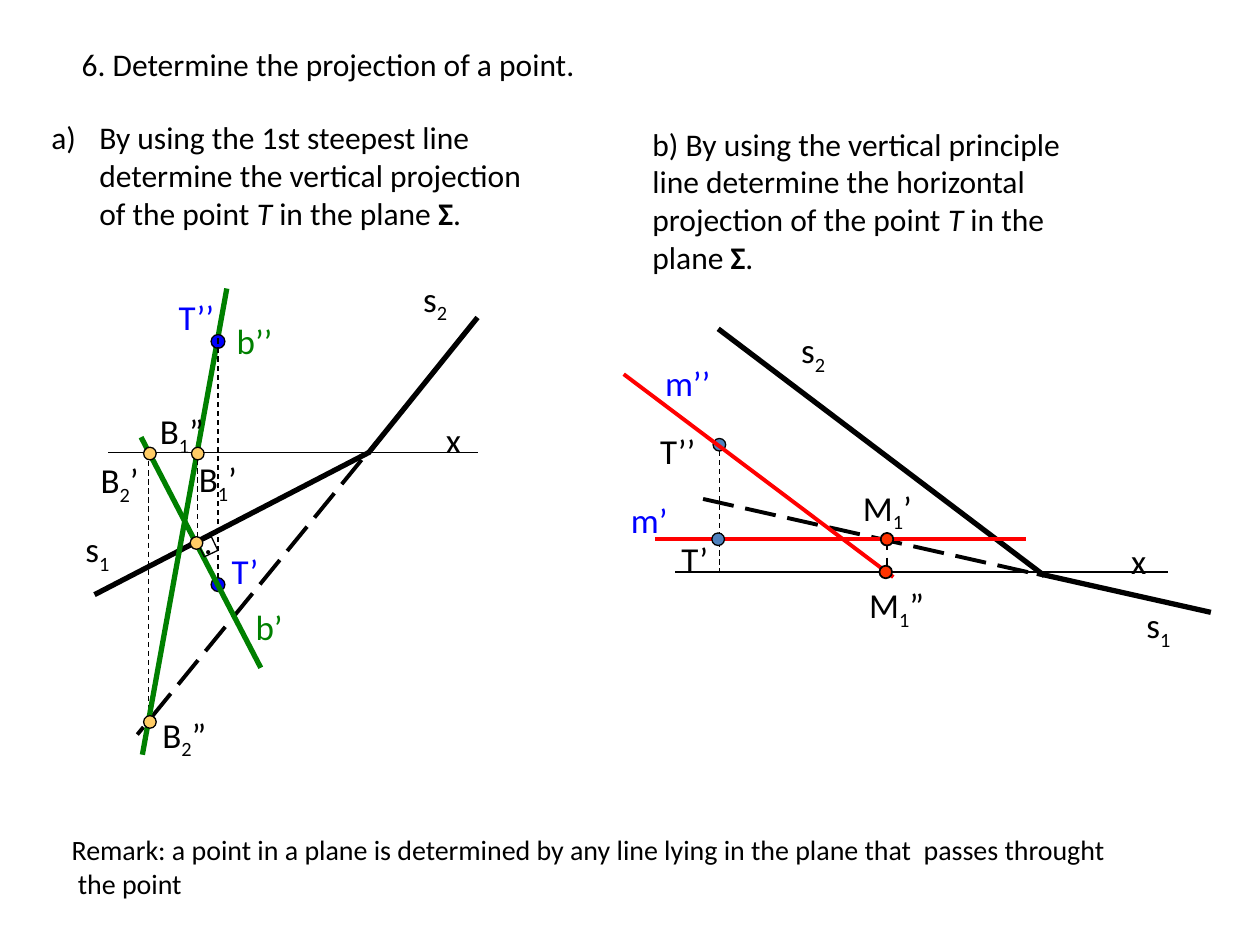
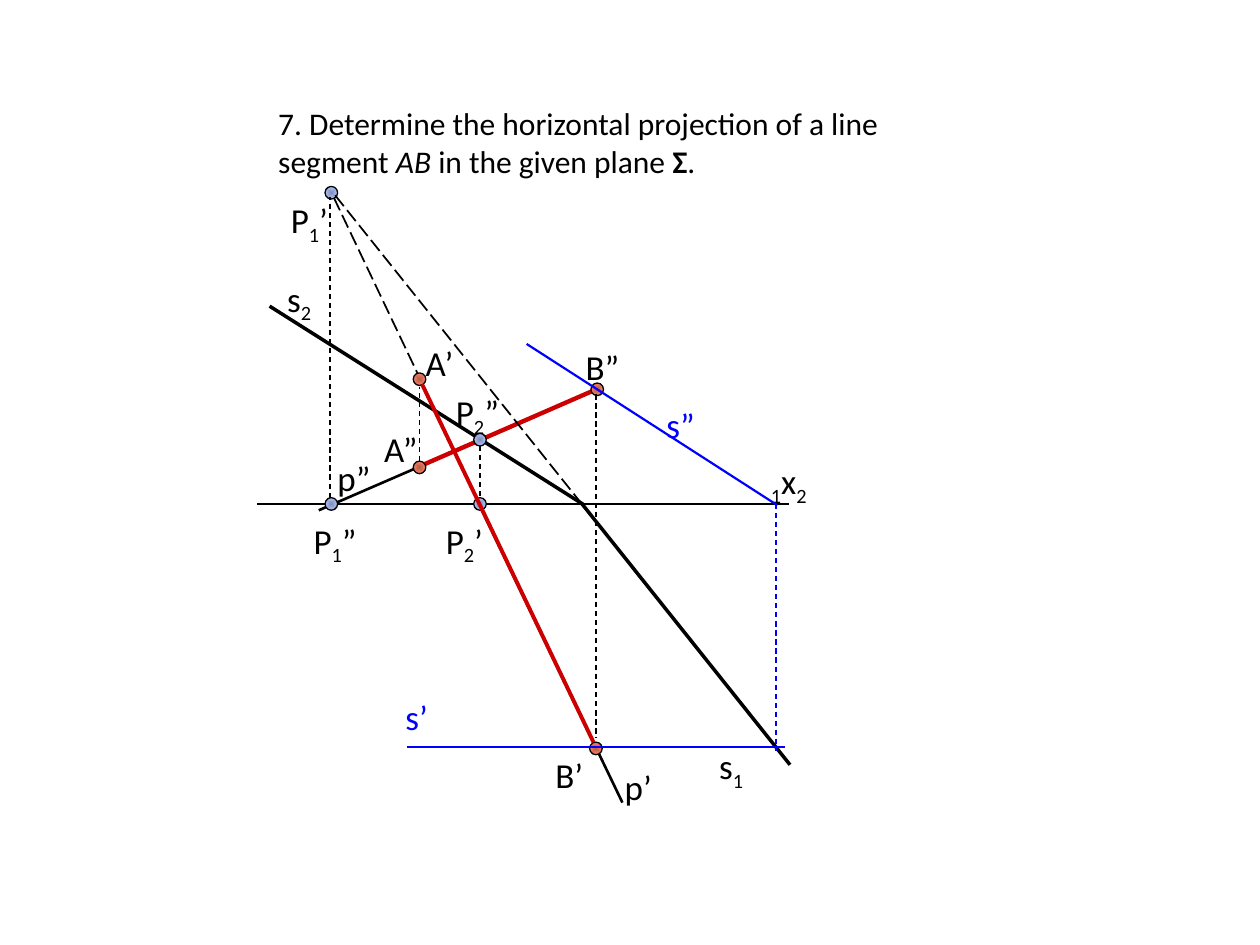
from dataclasses import dataclass
from typing import Optional, Union

from lxml.etree import SubElement
from pptx import Presentation
from pptx.dml.color import RGBColor
from pptx.enum.dml import MSO_LINE
from pptx.enum.shapes import MSO_CONNECTOR, MSO_SHAPE
from pptx.enum.text import MSO_AUTO_SIZE
from pptx.oxml.ns import qn
from pptx.slide import Slide
from pptx.util import Inches, Pt


@dataclass(frozen=True)
class Theme:
    font: str = "Calibri"
    black: str = "000000"
    blue: str = "0000FF"
    green: str = "008000"
    red: str = "FF0000"
    dark_red: str = "CC0000"
    steel: str = "4F81BD"
    sand: str = "FFCC66"
    orange: str = "FF3300"
    blue_glow: tuple[str, str] = ("808DB6", "B3C5FF")
    red_glow: tuple[str, str] = ("B65C47", "FF8163")
    label_size: float = 20
    task_size: float = 18
    remark_size: float = 16


THEME = Theme()


@dataclass(frozen=True)
class Pen:
    color: str = THEME.black
    width: float = 0.75
    dash: Optional[MSO_LINE] = None


AXIS = Pen()
PROJECTOR = Pen(dash=MSO_LINE.DASH)
TRACE = Pen(width=3)
HIDDEN_TRACE = Pen(width=2.25, dash=MSO_LINE.LONG_DASH)
STEEPEST = Pen(THEME.green, 3)
PRINCIPAL = Pen(THEME.red, 2.25)
PLANE_TRACE = Pen(width=2)
CARRIER = Pen(width=1.5)
HIDDEN_CARRIER = Pen(width=1, dash=MSO_LINE.LONG_DASH)
BLUE_LINE = Pen(THEME.blue, 1.25)


@dataclass(frozen=True)
class Segment:
    start: tuple[float, float]
    end: tuple[float, float]
    pen: Pen


@dataclass(frozen=True)
class Dot:
    """A marked point; a pair of fill colours runs from centre to rim."""
    x: float
    y: float
    fill: Union[str, tuple[str, str]]
    size: float = 0.1
    outline: float = 0.75


@dataclass(frozen=True)
class Label:
    left: float
    top: float
    text: str
    width: float = 0.7
    color: str = THEME.black


@dataclass(frozen=True)
class RightAngle:
    left: float
    top: float
    size: float
    rotation: float


Item = Union[Segment, Dot, Label, RightAngle]


def add_text(page: Slide, text: str, left: float, top: float, width: float,
             height: float = 0.44, *, size: float = THEME.label_size,
             color: str = THEME.black, wrap: bool = True, lettered: bool = False) -> None:
    """Underscore, slash and asterisk switch subscript, italic and bold on and off."""
    box = page.shapes.add_textbox(Inches(left), Inches(top), Inches(width), Inches(height))
    frame = box.text_frame
    frame.word_wrap = wrap
    frame.auto_size = MSO_AUTO_SIZE.SHAPE_TO_FIT_TEXT
    for index, line in enumerate(text.split("\n")):
        para = frame.paragraphs[0] if index == 0 else frame.add_paragraph()
        if lettered:
            properties = para._p.get_or_add_pPr()
            properties.set("marL", str(Inches(0.38)))
            properties.set("indent", str(-Inches(0.38)))
            SubElement(properties, qn("a:buAutoNum"), type="alphaLcParenR")
        active = {"_": False, "/": False, "*": False}
        pending = ""
        for character in line + "\0":
            if character not in active and character != "\0":
                pending += character
                continue
            if pending:
                span = para.add_run()
                span.text = pending
                span.font.name = THEME.font
                span.font.size = Pt(size)
                span.font.color.rgb = RGBColor.from_string(color)
                span.font.italic = active["/"]
                span.font.bold = active["*"]
                if active["_"]:
                    span.font._element.set("baseline", "-25000")
                pending = ""
            if character in active:
                active[character] = not active[character]


def apply_pen(line, pen: Pen) -> None:
    line.color.rgb = RGBColor.from_string(pen.color)
    line.width = Pt(pen.width)
    if pen.dash is not None:
        line.dash_style = pen.dash


def add_segment(page: Slide, segment: Segment) -> None:
    ends = [Inches(value) for value in (*segment.start, *segment.end)]
    connector = page.shapes.add_connector(MSO_CONNECTOR.STRAIGHT, *ends)
    apply_pen(connector.line, segment.pen)
    SubElement(connector._element.spPr, qn("a:effectLst"))


def fill_from_centre(fill, colors: tuple[str, str]) -> None:
    fill.gradient()
    for stop, position, color in zip(fill.gradient_stops, (0, 1), colors):
        stop.position = position
        stop.color.rgb = RGBColor.from_string(color)
    gradient = fill._fill._gradFill
    gradient.remove(gradient.find(qn("a:lin")))
    shade = SubElement(gradient, qn("a:path"), path="shape")
    SubElement(shade, qn("a:fillToRect"), dict.fromkeys("ltrb", "50000"))


def add_dot(page: Slide, dot: Dot) -> None:
    corner = (Inches(dot.x - dot.size / 2), Inches(dot.y - dot.size / 2))
    oval = page.shapes.add_shape(MSO_SHAPE.OVAL, *corner, Inches(dot.size), Inches(dot.size))
    oval.shadow.inherit = False
    if isinstance(dot.fill, tuple):
        fill_from_centre(oval.fill, dot.fill)
    else:
        oval.fill.solid()
        oval.fill.fore_color.rgb = RGBColor.from_string(dot.fill)
    apply_pen(oval.line, Pen(width=dot.outline))


def add_right_angle(page: Slide, mark: RightAngle) -> None:
    square = page.shapes.add_shape(MSO_SHAPE.RECTANGLE, Inches(mark.left), Inches(mark.top),
                                   Inches(mark.size), Inches(mark.size))
    square.rotation = mark.rotation
    square.shadow.inherit = False
    square.fill.background()
    apply_pen(square.line, AXIS)


def draw(page: Slide, items: list[Item]) -> None:
    for item in items:
        if isinstance(item, Segment):
            add_segment(page, item)
        elif isinstance(item, Dot):
            add_dot(page, item)
        elif isinstance(item, RightAngle):
            add_right_angle(page, item)
        else:
            add_text(page, item.text, item.left, item.top, item.width, color=item.color)


STEEPEST_LINE_FIGURE: list[Item] = [
    Segment((0.86, 3.59), (3.79, 3.59), AXIS),
    Segment((3.79, 2.52), (2.92, 3.6), TRACE),
    Segment((2.93, 3.59), (0.75, 4.72), TRACE),
    Label(0.58, 4.14, "s_1_"),
    Label(3.26, 2.15, "s_2_"),
    Segment((1.18, 3.59), (1.18, 5.77), PROJECTOR),
    Segment((2.87, 3.65), (1.09, 5.83), HIDDEN_TRACE),
    Segment((1.13, 5.99), (1.8, 2.29), STEEPEST),
    Label(1.78, 2.49, "b’’", color=THEME.green),
    Dot(1.73, 4.64, THEME.blue, 0.11),
    Label(1.74, 4.31, "T’", color=THEME.blue),
    Dot(1.73, 2.71, THEME.blue, 0.11),
    Segment((1.73, 4.59), (1.73, 2.66), PROJECTOR),
    Label(1.32, 2.3, "T’’", color=THEME.blue),
    Segment((1.12, 3.47), (2.07, 5.3), STEEPEST),
    Label(1.93, 4.76, "b’", color=THEME.green),
    RightAngle(1.59, 4.28, 0.12, 334.5),
    Label(1.52, 4.07, ".", 0.27),
    Dot(1.56, 4.31, THEME.sand),
    Dot(1.19, 3.6, THEME.sand),
    Label(1.48, 3.58, "B_1_’"),
    Label(0.7, 3.59, "B_2_’"),
    Segment((1.57, 4.26), (1.57, 3.6), PROJECTOR),
    Dot(1.57, 3.6, THEME.sand),
    Label(1.17, 3.2, "B_1_”"),
    Dot(1.19, 5.73, THEME.sand),
    Label(1.19, 5.61, "B_2_”"),
    Label(3.44, 3.27, "x"),
]

PRINCIPAL_LINE_FIGURE: list[Item] = [
    Segment((5.36, 4.54), (9.27, 4.54), AXIS),
    Segment((5.7, 2.61), (8.29, 4.57), TRACE),
    Segment((8.23, 4.55), (9.61, 4.86), TRACE),
    Segment((5.58, 3.96), (8.2, 4.55), HIDDEN_TRACE),
    Label(9, 4.74, "s_1_"),
    Label(6.26, 2.56, "s_2_"),
    Dot(5.71, 3.53, THEME.steel),
    Label(5.14, 3.36, "T’’"),
    Label(8.88, 4.23, "x"),
    Segment((4.95, 2.97), (7.09, 4.58), PRINCIPAL),
    Label(5.18, 2.82, "m’’", color=THEME.blue),
    Segment((5.2, 4.28), (8.14, 4.28), PRINCIPAL),
    Label(4.91, 3.91, "m’", color=THEME.blue),
    Segment((5.71, 3.58), (5.71, 4.55), PROJECTOR),
    Dot(5.7, 4.28, THEME.steel),
    Label(5.31, 4.22, "T’"),
    Segment((7.04, 4.28), (7.04, 4.54), Pen(width=1.5, dash=MSO_LINE.DASH)),
    Dot(7.04, 4.28, THEME.orange, outline=1),
    Label(6.75, 3.81, "M_1_’"),
    Dot(7.03, 4.54, THEME.orange, outline=1),
    Label(6.8, 4.58, "M_1_”"),
]

LINE_SEGMENT_FIGURE: list[Item] = [
    Segment((2.04, 4), (6.26, 4), AXIS),
    Label(6.02, 3.6, "_1_x_2_"),
    Segment((2.14, 2.43), (4.64, 4.01), PLANE_TRACE),
    Segment((4.62, 4), (6.27, 6.07), PLANE_TRACE),
    Label(2.18, 2.15, "s_2_"),
    Label(5.61, 5.86, "s_1_"),
    Label(2.95, 3.34, "A”"),
    Label(4.55, 2.69, "B”"),
    Segment((2.53, 4.05), (4.26, 3.3), CARRIER),
    Label(2.58, 3.57, "p”"),
    Segment((3.31, 3.71), (4.71, 3.1), Pen(THEME.dark_red, 2.5)),
    Dot(3.81, 3.49, THEME.blue_glow),
    Dot(2.63, 4, THEME.blue_glow),
    Label(3.52, 3.05, "P_2_”"),
    Dot(3.81, 4, THEME.blue_glow),
    Segment((3.81, 3.54), (3.81, 3.96), PROJECTOR),
    Label(3.44, 4.07, "P_2_’"),
    Label(2.39, 4.07, "P_1_”"),
    Dot(2.63, 1.53, THEME.blue_glow),
    Segment((2.62, 3.95), (2.62, 1.56), PROJECTOR),
    Segment((2.66, 1.55), (4.61, 3.99), HIDDEN_CARRIER),
    Label(2.21, 1.53, "P_1_’"),
    Segment((2.65, 1.57), (4.16, 4.74), HIDDEN_CARRIER),
    Segment((3.82, 4.04), (4.94, 6.37), CARRIER),
    Label(4.86, 6.03, "p’"),
    Dot(3.33, 3.71, THEME.red_glow),
    Dot(4.74, 3.09, THEME.red_glow),
    Dot(4.73, 5.94, THEME.red_glow),
    Segment((4.73, 3.13), (4.73, 5.86), PROJECTOR),
    Label(4.31, 5.93, "B’"),
    Dot(3.33, 3.01, THEME.red_glow),
    Segment((3.33, 3.66), (3.33, 3.07), PROJECTOR),
    Label(3.28, 2.66, "A’"),
    Segment((3.35, 3.05), (4.71, 5.89), Pen(THEME.dark_red, 2.25)),
    Segment((4.18, 2.73), (6.17, 4.01), BLUE_LINE),
    Label(5.19, 3.15, "s”", color=THEME.blue),
    Segment((6.16, 4), (6.16, 5.96), Pen(THEME.blue, dash=MSO_LINE.DASH)),
    Segment((3.23, 5.93), (6.23, 5.93), BLUE_LINE),
    Label(3.12, 5.47, "s’", color=THEME.blue),
]


def main() -> None:
    deck = Presentation()
    deck.slide_width, deck.slide_height = Inches(10), Inches(7.5)
    point_page, segment_page = (deck.slides.add_slide(deck.slide_layouts[6]) for _ in range(2))

    draw(point_page, PRINCIPAL_LINE_FIGURE + STEEPEST_LINE_FIGURE)
    add_text(point_page, "6. Determine the projection of a point.",
             0.55, 0.31, 4.12, 0.71, size=THEME.task_size)
    add_text(point_page, "By using the 1st steepest line determine the vertical projection "
             "of the point /T /in the plane *Σ*.",
             0.31, 0.89, 4.07, 1.01, size=THEME.task_size, lettered=True)
    add_text(point_page, "b) By using the vertical principle line determine the horizontal "
             "projection of the point /T /in the plane *Σ*.",
             5.08, 0.94, 3.85, 1.31, size=THEME.task_size)
    add_text(point_page, "Remark: a point in a plane is determined by any line lying in the "
             "plane that  passes throught\n the point",
             0.47, 6.56, 8.55, 0.64, size=THEME.remark_size, wrap=False)

    add_text(segment_page, "7. Determine the horizontal projection of a line segment /AB /in "
             "the given plane *Σ*.", 2.11, 0.78, 5.29, 0.71, size=THEME.task_size)
    draw(segment_page, LINE_SEGMENT_FIGURE)
    deck.save("out.pptx")


if __name__ == "__main__":
    main()
